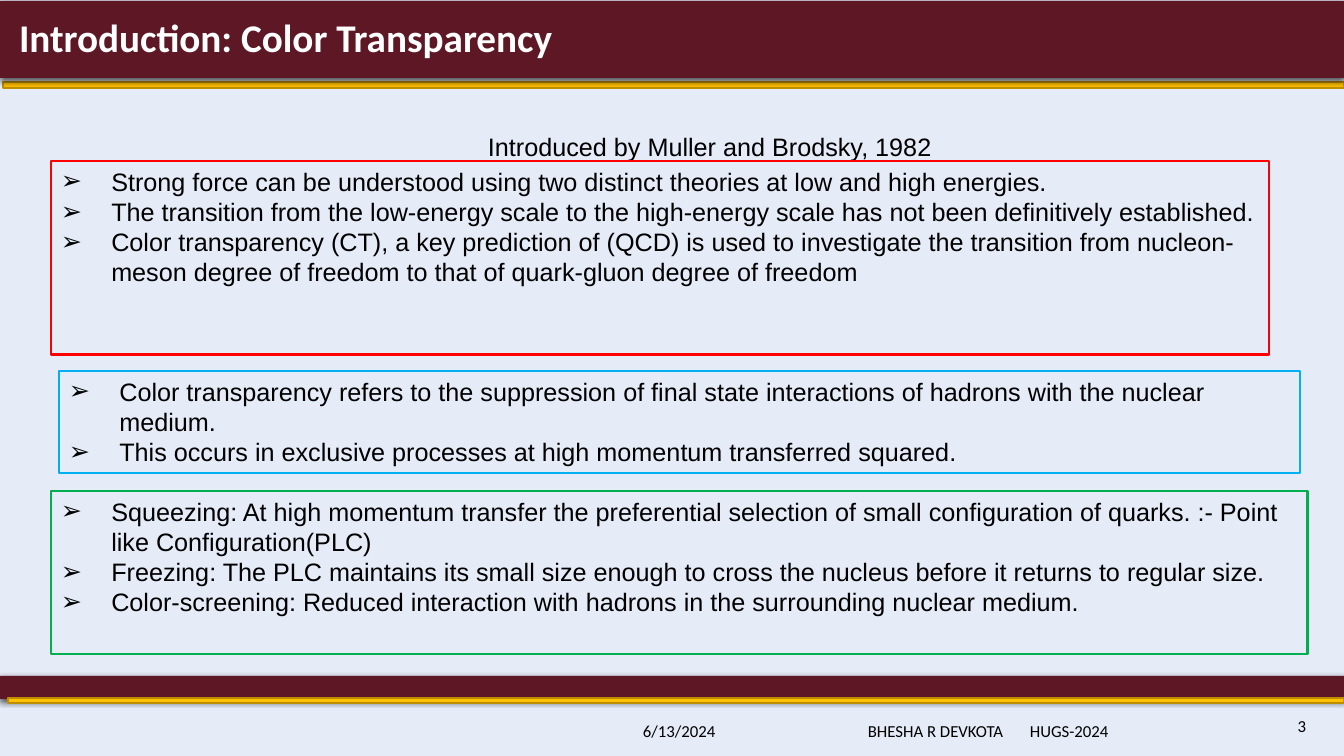
from dataclasses import dataclass

from lxml import etree
from pptx import Presentation
from pptx.dml.color import RGBColor
from pptx.enum.shapes import MSO_SHAPE
from pptx.enum.text import MSO_ANCHOR, PP_ALIGN
from pptx.oxml.ns import qn
from pptx.util import Emu, Pt

RECTANGLE = MSO_SHAPE.RECTANGLE
TOP, MIDDLE = MSO_ANCHOR.TOP, MSO_ANCHOR.MIDDLE
LEFT, RIGHT = PP_ALIGN.LEFT, PP_ALIGN.RIGHT
EMU_PER_PX = 914400 / 100.8
SLIDE_WIDTH, SLIDE_HEIGHT = 1344, 756


@dataclass(frozen=True)
class Theme:
    page: str = "E5EBF7"
    maroon: str = "5D1725"
    gold: str = "FFC000"
    gold_edge: str = "BD8E00"
    red: str = "FF0000"
    blue: str = "00B0F0"
    green: str = "00B050"
    ink: str = "000000"
    white: str = "FFFFFF"
    heading_font: str = "Calibri"
    body_font: str = "Arial"
    title_size: int = 28
    body_size: int = 18
    footer_size: int = 12


THEME = Theme()

THEORY_POINTS = [
    "Strong force can be understood using two distinct theories at low and high energies.",
    "The transition from the low-energy scale to the high-energy scale has not been "
    "definitively established.",
    "Color transparency (CT), a key prediction of (QCD) is used to investigate the transition "
    "from nucleon-meson degree of freedom to that of quark-gluon degree of freedom",
]
DEFINITION_POINTS = [
    "Color transparency refers to the suppression of final state interactions of hadrons "
    "with the nuclear medium.",
    "This occurs in exclusive processes at high momentum transferred squared.",
]
STAGE_POINTS = [
    "Squeezing: At high momentum transfer the preferential selection of small configuration "
    "of quarks. :- Point like Configuration(PLC)",
    "Freezing: The PLC maintains its small size enough to cross the nucleus before it "
    "returns to regular size.",
    "Color-screening: Reduced interaction with hadrons in the surrounding nuclear medium.",
]


def px(length):
    return Emu(round(length * EMU_PER_PX))


def color(value):
    return RGBColor.from_string(value)


def add_rectangle(page, place, fill=None, line=None, line_width=1):
    box = page.shapes.add_shape(RECTANGLE, *map(px, place))
    box.shadow.inherit = False
    if fill:
        box.fill.solid()
        box.fill.fore_color.rgb = color(fill)
    else:
        box.fill.background()
    if line:
        box.line.color.rgb = color(line)
        box.line.width = Pt(line_width)
    else:
        box.line.fill.background()
    return box


def add_drop_shadow(box):
    effects = box._element.spPr.find(qn("a:effectLst"))
    shadow = etree.SubElement(effects, qn("a:outerShdw"), blurRad=str(Pt(4.5)),
                              dist=str(Pt(1.5)), dir="5400000", rotWithShape="0")
    shade = etree.SubElement(shadow, qn("a:srgbClr"), val=THEME.ink)
    etree.SubElement(shade, qn("a:alpha"), val="63000")


def add_band(page, place):
    band = add_rectangle(page, place, THEME.maroon)
    add_drop_shadow(band)
    return band


def add_gold_rule(page, place):
    add_rectangle(page, place, THEME.gold, THEME.gold_edge)


def set_frame(box, anchor):
    frame = box.text_frame
    frame.word_wrap = True
    frame.vertical_anchor = anchor
    return frame


def write_span(para, text, font, size, ink=THEME.ink, bold=False):
    span = para.add_run()
    span.text = text
    span.font.name = font
    span.font.size = Pt(size)
    span.font.color.rgb = color(ink)
    span.font.bold = bold


def add_label(page, place, text, font, size, anchor=MIDDLE, align=LEFT):
    box = page.shapes.add_textbox(*map(px, place))
    para = set_frame(box, anchor).paragraphs[0]
    para.alignment = align
    write_span(para, text, font, size)


def add_title(page, place, text):
    frame = set_frame(add_band(page, place), MIDDLE)
    frame.margin_left = px(19)
    para = frame.paragraphs[0]
    para.alignment = LEFT
    para.line_spacing = 0.9
    write_span(para, text, THEME.heading_font, THEME.title_size, THEME.white, True)


def set_arrow_bullet(para):
    properties = para._p.get_or_add_pPr()
    properties.set("marL", "457200")
    properties.set("indent", "-457200")
    etree.SubElement(properties, qn("a:buFont"), typeface=THEME.body_font)
    etree.SubElement(properties, qn("a:buChar"), char="➢")


def add_bullet_box(page, place, outline, points):
    frame = set_frame(add_rectangle(page, place, line=outline, line_width=2), TOP)
    for index, point in enumerate(points):
        para = frame.add_paragraph() if index else frame.paragraphs[0]
        para.alignment = LEFT
        set_arrow_bullet(para)
        write_span(para, point, THEME.body_font, THEME.body_size)


def add_footer(page):
    for left, width, text in [
        (633, 145, "6/13/2024"),
        (858, 162, "BHESHA R DEVKOTA"),
        (1020, 120, "HUGS-2024"),
    ]:
        add_label(page, (left, 708, width, 46), text, THEME.heading_font, THEME.footer_size)
    add_label(page, (1051, 703, 265, 45), "3", THEME.heading_font, THEME.footer_size,
              align=RIGHT)


def main():
    deck = Presentation()
    deck.slide_width, deck.slide_height = px(SLIDE_WIDTH), px(SLIDE_HEIGHT)
    page = deck.slides.add_slide(deck.slide_layouts[6])
    page.background.fill.solid()
    page.background.fill.fore_color.rgb = color(THEME.page)

    add_gold_rule(page, (3, 82, 1341, 6))
    add_band(page, (0, 676, SLIDE_WIDTH, 23))
    add_gold_rule(page, (8, 698, 1336, 5))
    add_title(page, (0, 1, SLIDE_WIDTH, 77), "Introduction: Color Transparency")
    add_footer(page)

    add_bullet_box(page, (59, 371, 1241, 102), THEME.blue, DEFINITION_POINTS)
    add_bullet_box(page, (51, 491, 1257, 163), THEME.green, STAGE_POINTS)
    add_label(page, (478, 126, 550, 72), "Introduced by Muller and Brodsky, 1982",
              THEME.body_font, THEME.body_size, anchor=TOP)
    add_bullet_box(page, (51, 161, 1218, 194), THEME.red, THEORY_POINTS)
    deck.save("out.pptx")


if __name__ == "__main__":
    main()
